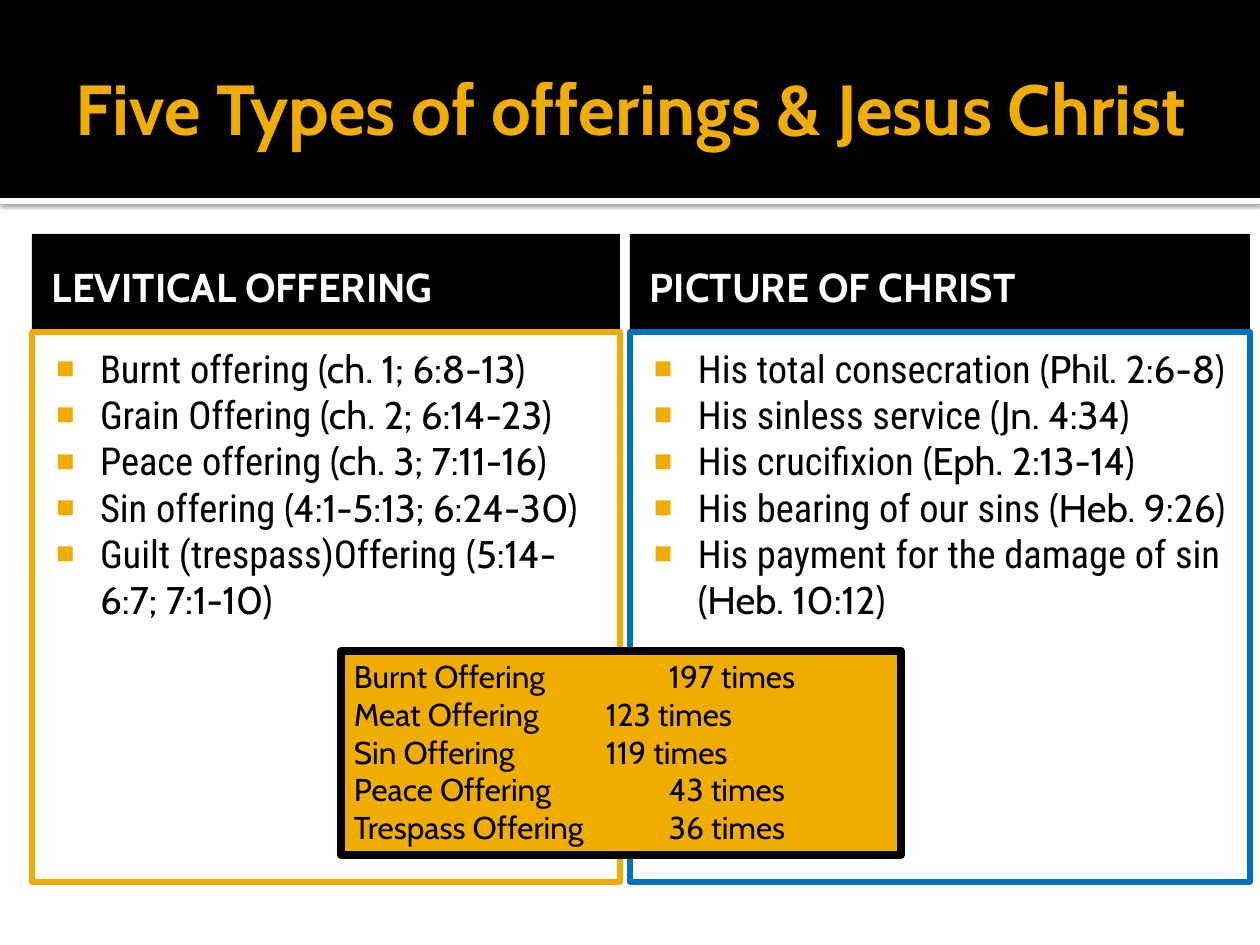
from dataclasses import dataclass

from lxml import etree
from pptx import Presentation
from pptx import util as u
from pptx.dml.color import RGBColor
from pptx.enum import shapes, text
from pptx.oxml import ns

EMU_PER_PX = 914400 / 126
GOLD, BLUE, BLACK, WHITE = "F0AD00", "0070C0", "000000", "FFFFFF"
CABIN, CONDENSED = "Cabin", "Roboto Condensed"


@dataclass(frozen=True)
class Column:
    left: int
    width: int
    border: str
    heading: str
    items: list[tuple[str, str]]


COLUMNS = [
    Column(32, 588, GOLD, "LEVITICAL OFFERING", [
        ("Burnt offering ", "(ch. 1; 6:8-13)"),
        ("Grain Offering ", "(ch. 2; 6:14-23)"),
        ("Peace offering ", "(ch. 3; 7:11-16)"),
        ("Sin offering ", "(4:1-5:13; 6:24-30)"),
        ("Guilt (trespass)Offering ", "(5:14-6:7; 7:1-10)"),
    ]),
    Column(630, 620, BLUE, "PICTURE OF CHRIST", [
        ("His total consecration ", "(Phil. 2:6-8)"),
        ("His sinless service ", "(Jn. 4:34)"),
        ("His crucifixion ", "(Eph. 2:13-14)"),
        ("His bearing of our sins ", "(Heb. 9:26)"),
        ("His payment for the damage of sin ", "(Heb. 10:12)"),
    ]),
]
MENTIONS = [("Burnt", 197), ("Meat", 123), ("Sin", 119), ("Peace", 43), ("Trespass", 36)]


def px(length: int) -> int:
    return round(length * EMU_PER_PX)


def color(value: str) -> RGBColor:
    return RGBColor.from_string(value)


def add_rect(slide, left: int, top: int, width: int, height: int, *,
             fill: str | None = None, line: str | None = None, weight: float = 0):
    rect = slide.shapes.add_shape(shapes.MSO_SHAPE.RECTANGLE,
                                  px(left), px(top), px(width), px(height))
    rect.shadow.inherit = False
    if fill:
        rect.fill.solid()
        rect.fill.fore_color.rgb = color(fill)
    else:
        rect.fill.background()
    if line:
        rect.line.color.rgb = color(line)
        rect.line.width = u.Pt(weight)
    else:
        rect.line.fill.background()
    return rect


def sub(parent, tag: str, **attributes: str):
    return etree.SubElement(parent, ns.qn(tag), attributes)


def add_bullet(paragraph) -> None:
    properties = paragraph._p.get_or_add_pPr()
    properties.set("marL", str(px(60)))
    properties.set("indent", str(px(-44)))
    sub(sub(properties, "a:buClr"), "a:srgbClr", val=GOLD)
    sub(properties, "a:buSzPct", val="80000")
    sub(properties, "a:buFont", typeface="Arial")
    sub(properties, "a:buChar", char="■")


def write(shape, lines: list[tuple[str, ...]], *, size: float, fonts: tuple[str, ...] = (CABIN,),
          ink: str = BLACK, bold: bool = False, bullets: bool = False,
          anchor=text.MSO_ANCHOR.TOP, insets: tuple[int, int, int, int] = (13, 6, 13, 6)) -> None:
    frame = shape.text_frame
    frame.word_wrap = True
    frame.vertical_anchor = anchor
    frame.margin_left, frame.margin_top, frame.margin_right, frame.margin_bottom = map(px, insets)
    for index, parts in enumerate(lines):
        paragraph = frame.add_paragraph() if index else frame.paragraphs[0]
        paragraph.alignment = text.PP_ALIGN.LEFT
        if bullets:
            add_bullet(paragraph)
        for part, font in zip(parts, fonts):
            run = paragraph.add_run()
            run.text = part
            run.font.name = font
            run.font.size = u.Pt(size)
            run.font.bold = bold
            run.font.color.rgb = color(ink)


def add_banner(slide) -> None:
    strip = add_rect(slide, 0, 198, 1260, 6, fill=WHITE)
    effects = strip._element.spPr.find(ns.qn("a:effectLst"))
    shadow = sub(effects, "a:outerShdw", blurRad=str(u.Pt(2.5)), dist=str(u.Pt(0.8)),
                 dir="5400000", algn="tl", rotWithShape="0")
    sub(sub(shadow, "a:srgbClr", val=BLACK), "a:alpha", val="60000")
    add_rect(slide, 0, 0, 1260, 198, fill=BLACK)
    title = slide.shapes.add_textbox(px(63), px(21), px(1134), px(173))
    write(title, [("Five Types of offerings & Jesus Christ",)], size=40.5, ink=GOLD, bold=True,
          anchor=text.MSO_ANCHOR.MIDDLE, insets=(13, 6, 6, 6))


def add_column(slide, column: Column) -> None:
    heading = add_rect(slide, column.left, 234, column.width, 98, fill=BLACK)
    write(heading, [(column.heading,)], size=23, ink=WHITE, bold=True,
          anchor=text.MSO_ANCHOR.MIDDLE, insets=(20, 13, 13, 6))
    listing = add_rect(slide, column.left, 332, column.width, 550, line=column.border, weight=3)
    write(listing, column.items, size=22, fonts=(CONDENSED, CABIN), bullets=True,
          insets=(8, 13, 13, 6))


def add_mentions(slide) -> None:
    tally = add_rect(slide, 341, 651, 560, 204, fill=GOLD, line=BLACK, weight=4.5)
    write(tally, [(f"{name} Offering\t\t{count} times",) for name, count in MENTIONS], size=18)
    tally.text_frame.auto_size = text.MSO_AUTO_SIZE.SHAPE_TO_FIT_TEXT


def main() -> None:
    deck = Presentation()
    deck.slide_width, deck.slide_height = px(1260), px(945)
    slide = deck.slides.add_slide(deck.slide_layouts[6])
    add_banner(slide)
    for column in COLUMNS:
        add_column(slide, column)
    add_mentions(slide)
    deck.save("out.pptx")


if __name__ == "__main__":
    main()
